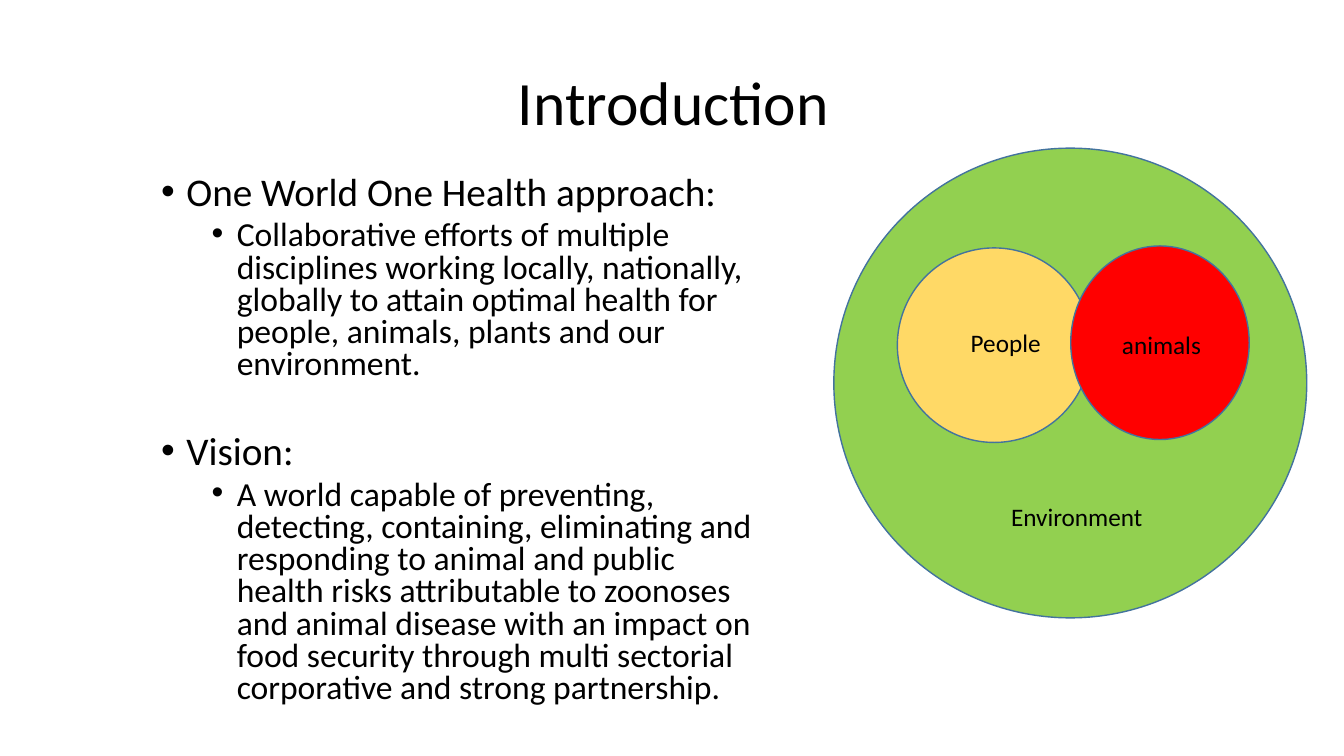
from lxml import etree
from pptx import Presentation
from pptx import util as u
from pptx.dml.color import RGBColor
from pptx.enum import shapes, text
from pptx.oxml.ns import qn

BLACK = RGBColor(0x00, 0x00, 0x00)
GREEN = RGBColor(0x92, 0xD0, 0x50)
YELLOW = RGBColor(0xFF, 0xD9, 0x66)
RED = RGBColor(0xFF, 0x00, 0x00)
OUTLINE = RGBColor(0x43, 0x73, 0x9E)

APPROACH = (
    "Collaborative efforts of multiple disciplines working locally, nationally, "
    "globally to attain optimal health for people, animals, plants and our environment."
)
VISION = (
    "A world capable of preventing, detecting, containing, eliminating and responding "
    "to animal and public health risks attributable to zoonoses and animal disease with "
    "an impact on food security through multi sectorial corporative and strong partnership."
)
BULLETS = [
    (0, "One World One Health approach:", 10),
    (1, APPROACH, 5),
    (0, "Vision:", 38),
    (1, VISION, 5),
]
CIRCLES = [
    (8.27, 1.47, 4.69, 4.66, GREEN),
    (8.9, 2.46, 1.92, 1.93, YELLOW),
    (10.62, 2.44, 1.77, 1.92, RED),
]
LABELS = [
    ("Environment", 9.93, 4.92, 2.54),
    ("People", 9.53, 3.2, 1.03),
    ("animals", 11.03, 3.22, 1.14),
]


class SlideBuilder:
    font = "Calibri"
    level_sizes = (28, 24)
    level_indents = (0.25, 0.75)

    def __init__(self, slide):
        self.slide = slide

    def text_frame(self, left, top, width, height):
        box = self.slide.shapes.add_textbox(
            u.Inches(left), u.Inches(top), u.Inches(width), u.Inches(height)
        )
        box.text_frame.word_wrap = True
        return box.text_frame

    def set_text(self, paragraph, words, size):
        paragraph.text = words
        for run in paragraph.runs:
            run.font.name = self.font
            run.font.size = u.Pt(size)
            run.font.color.rgb = BLACK

    def title(self, words, left, top, width, height):
        frame = self.text_frame(left, top, width, height)
        frame.vertical_anchor = text.MSO_ANCHOR.MIDDLE
        paragraph = frame.paragraphs[0]
        self.set_text(paragraph, words, 44)
        paragraph.alignment = text.PP_ALIGN.CENTER
        paragraph.line_spacing = 0.9

    def bullets(self, items, left, top, width, height):
        frame = self.text_frame(left, top, width, height)
        frame.margin_top = u.Inches(0.57)
        for index, (level, words, space_before) in enumerate(items):
            paragraph = frame.add_paragraph() if index else frame.paragraphs[0]
            self.set_text(paragraph, words, self.level_sizes[level])
            paragraph.level = level
            paragraph.line_spacing = 0.8
            paragraph.space_before = u.Pt(space_before)
            properties = paragraph._p.get_or_add_pPr()
            properties.set("marL", str(u.Inches(self.level_indents[level])))
            properties.set("indent", str(u.Inches(-0.25)))
            etree.SubElement(properties, qn("a:buFont"), typeface="Arial")
            etree.SubElement(properties, qn("a:buChar"), char="•")

    def circle(self, left, top, width, height, color):
        shape = self.slide.shapes.add_shape(
            shapes.MSO_SHAPE.OVAL,
            u.Inches(left), u.Inches(top), u.Inches(width), u.Inches(height),
        )
        shape.shadow.inherit = False
        shape.fill.solid()
        shape.fill.fore_color.rgb = color
        shape.line.color.rgb = OUTLINE
        shape.line.width = u.Pt(1)

    def label(self, words, left, top, width):
        frame = self.text_frame(left, top, width, 0.4)
        frame.auto_size = text.MSO_AUTO_SIZE.SHAPE_TO_FIT_TEXT
        self.set_text(frame.paragraphs[0], words, 18)


def main():
    presentation = Presentation()
    presentation.slide_width = u.Inches(13.33)
    presentation.slide_height = u.Inches(7.5)
    slide = presentation.slides.add_slide(presentation.slide_layouts[6])
    builder = SlideBuilder(slide)
    builder.title("Introduction ", 1.5, 0.43, 10.5, 1.23)
    builder.bullets(BULLETS, 1.5, 1.18, 6.08, 6.02)
    for circle in CIRCLES:
        builder.circle(*circle)
    for label in LABELS:
        builder.label(*label)
    presentation.save("out.pptx")


if __name__ == "__main__":
    main()
